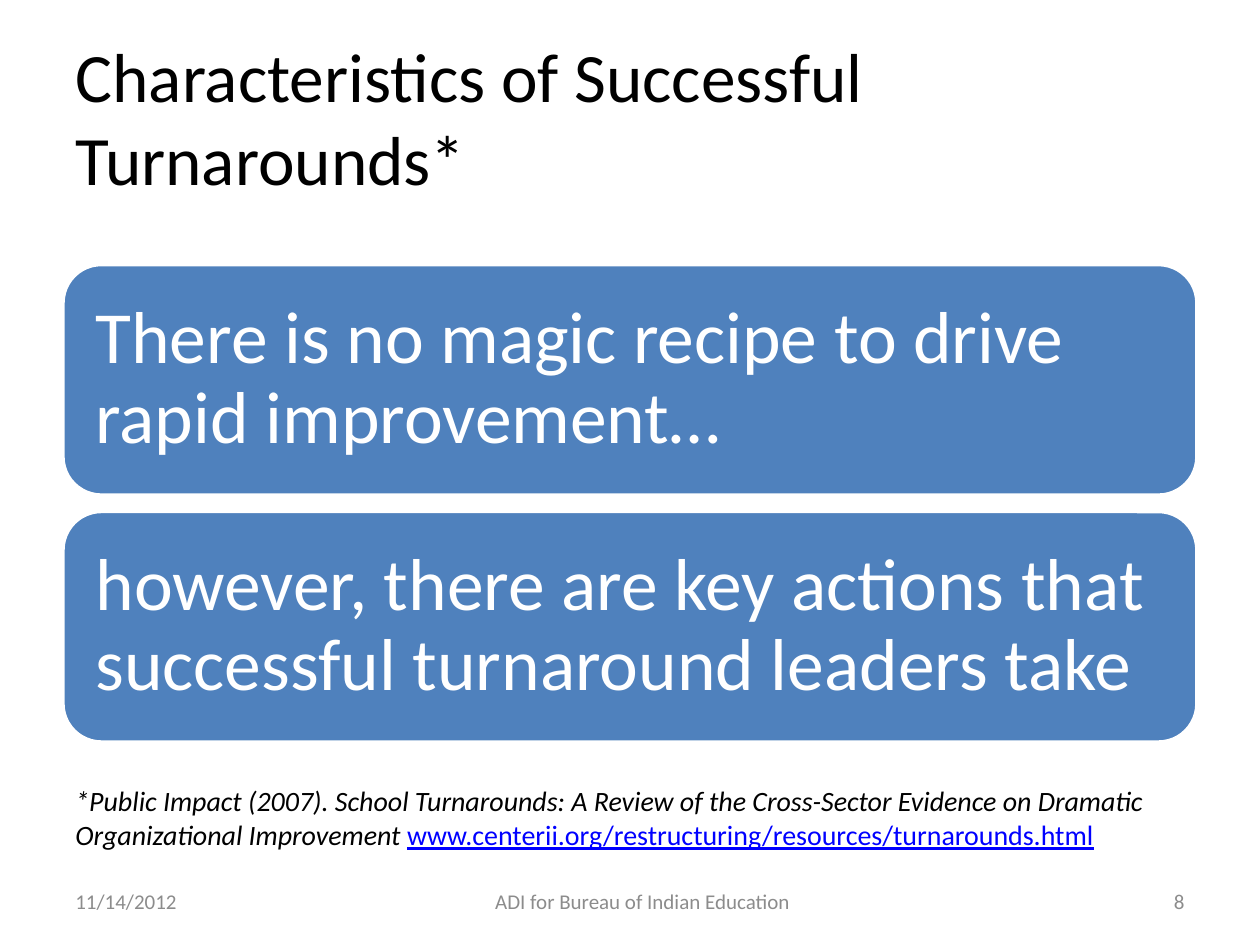
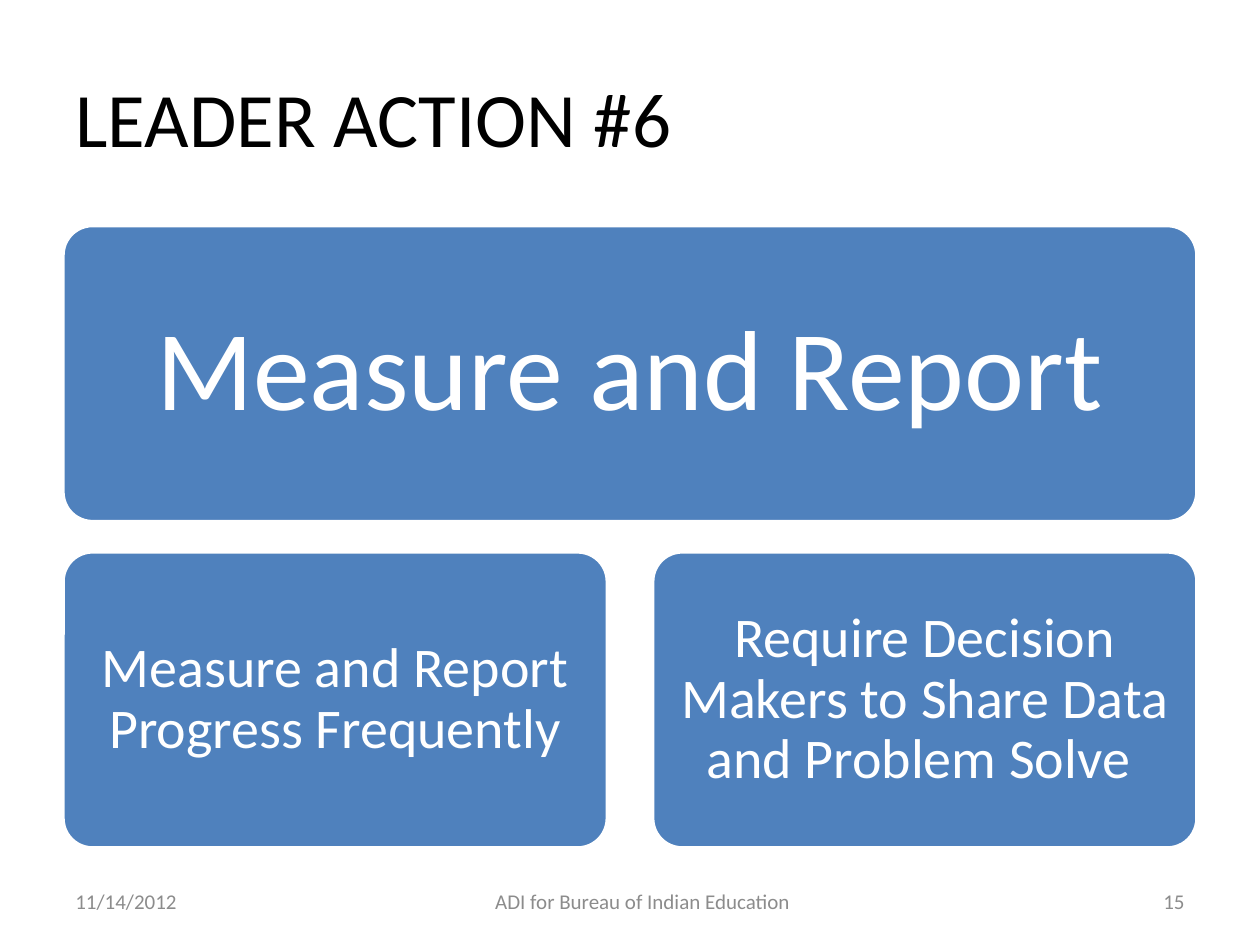
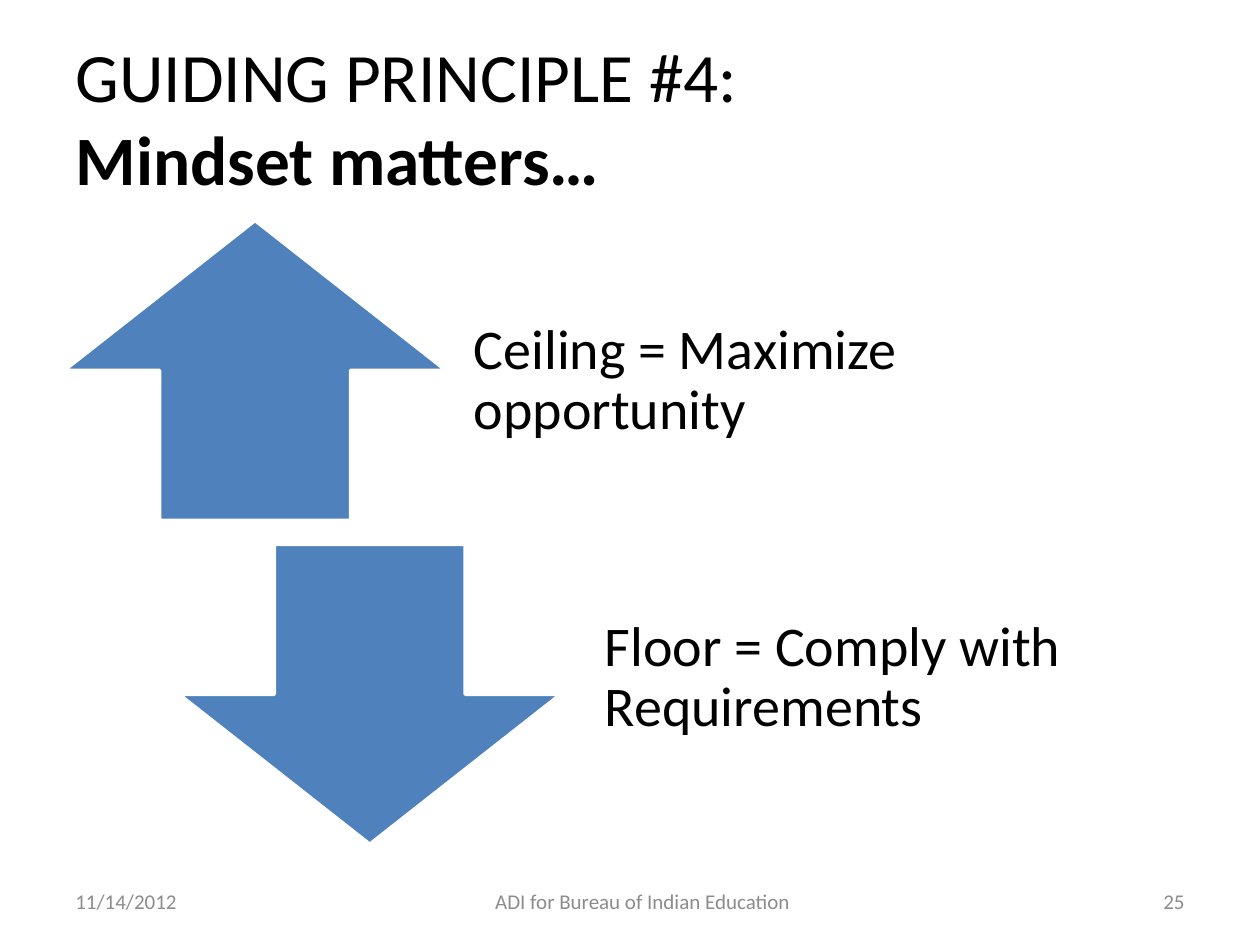
from dataclasses import dataclass
from pptx import Presentation
from pptx import util as u
from pptx.dml.color import RGBColor
from pptx.enum import shapes, text


@dataclass(frozen=True)
class Theme:
    font: str = "Calibri"
    blue: RGBColor = RGBColor(0x4F, 0x81, 0xBD)
    white: RGBColor = RGBColor(0xFF, 0xFF, 0xFF)
    black: RGBColor = RGBColor(0, 0, 0)
    grey: RGBColor = RGBColor(0x8C, 0x8C, 0x8C)
    link: RGBColor = RGBColor(0, 0, 0xFF)
    title: float = 44
    long_title: float = 39.6
    banner: float = 65
    statement: float = 42
    body: float = 32
    note: float = 16
    footer: float = 12


T = Theme()
SHAPE, ALIGN = shapes.MSO_SHAPE, text.PP_ALIGN

prs = Presentation()
prs.slide_width, prs.slide_height = u.Inches(10), u.Inches(7.5)

# Page grid, in inches
MARGIN = 0.05 * prs.slide_width.inches
WIDTH = prs.slide_width.inches - 2 * MARGIN
RIGHT = MARGIN + WIDTH


def write(sp, words, size, color, align=ALIGN.LEFT, insets=(0.1, 0.05, 0.1, 0.05),
          spacing=1.0, anchor=text.MSO_ANCHOR.MIDDLE):
    """Fill a shape with text in one style; insets run left, top, right, bottom."""
    tf = sp.text_frame
    tf.text = words
    tf.word_wrap = True
    tf.auto_size = text.MSO_AUTO_SIZE.NONE
    tf.vertical_anchor = anchor
    tf.margin_left, tf.margin_top, tf.margin_right, tf.margin_bottom = map(u.Inches, insets)
    p = tf.paragraphs[0]
    p.alignment, p.line_spacing = align, spacing
    for r in p.runs:
        r.font.name, r.font.size, r.font.color.rgb = T.font, u.Pt(size), color
    return p


def add_block(s, kind, left, top, width, height):
    """Add a blue shape with a white outline."""
    sp = s.shapes.add_shape(kind, *map(u.Inches, (left, top, width, height)))
    sp.shadow.inherit = False
    sp.fill.solid()
    sp.fill.fore_color.rgb = T.blue
    sp.line.color.rgb, sp.line.width = T.white, u.Pt(2)
    return sp


# Titles and footers of all slides
slides, titles = [], []
for title, size, number in (
    ("Characteristics of Successful Turnarounds*", T.long_title, "8"),
    ("LEADER ACTION #6", T.title, "15"),
    ("GUIDING PRINCIPLE #4:\vMindset matters…", T.long_title, "25"),
):
    s = prs.slides.add_slide(prs.slide_layouts[5])
    sp = s.shapes.title
    sp.left, sp.top, sp.width, sp.height = map(u.Inches, (MARGIN, 0.3, WIDTH, 1.25))
    titles.append(write(sp, title, size, T.black))
    for words, left, width, align in (
        ("11/14/2012", MARGIN, 2.33, ALIGN.LEFT),
        ("ADI for Bureau of Indian Education", 2.83, 4.54, ALIGN.CENTER),
        (number, RIGHT - 2.33, 2.33, ALIGN.RIGHT),
    ):
        sp = s.shapes.add_textbox(*map(u.Inches, (left, 6.95, width, 0.4)))
        write(sp, words, T.footer, T.grey, align)
    slides.append(s)
turnarounds, action, principle = slides

# Turnarounds: two stacked statements and a source note
height, gap = 1.83, 0.13
for row, words in enumerate((
    "There is no magic recipe to drive rapid improvement…",
    "however, there are key actions that successful turnaround leaders take",
)):
    sp = add_block(turnarounds, SHAPE.ROUNDED_RECTANGLE,
                   MARGIN, 2.1 + row * (height + gap), WIDTH, height)
    write(sp, words, T.statement, T.white, insets=(0.17,) * 4, spacing=0.9)

sp = turnarounds.shapes.add_textbox(*map(u.Inches, (MARGIN, 6.17, WIDTH, 0.64)))
p = write(sp, "*Public Impact (2007). School Turnarounds: A Review of the Cross-Sector "
          "Evidence on Dramatic Organizational Improvement ", T.note, T.black,
          anchor=text.MSO_ANCHOR.TOP)
p.runs[0].font.italic = True
r = p.add_run()
r.text = "www.centerii.org/restructuring/resources/turnarounds.html"
r.font.name, r.font.size, r.font.color.rgb = T.font, u.Pt(T.note), T.link
r.font.underline = True

# Leader action: one banner over two columns
top, height, row_gap, col_gap = 1.79, 2.35, 0.24, 0.36
column = (WIDTH - col_gap) / 2
for words, row, col, width, size, inset in (
    ("Measure and Report", 0, 0, WIDTH, T.banner, 0.27),
    ("Measure and Report Progress Frequently", 1, 0, column, T.body, 0.13),
    ("Require Decision Makers to Share Data and Problem Solve ", 1, 1, column, T.body, 0.13),
):
    sp = add_block(action, SHAPE.ROUNDED_RECTANGLE, MARGIN + col * (column + col_gap),
                   top + row * (height + row_gap), width, height)
    sp.adjustments[0] = 0.1
    write(sp, words, size, T.white, ALIGN.CENTER, (inset,) * 4, 0.9)

# Guiding principle: opposing arrows with their labels
titles[2].runs[1].font.bold = True
height = 2.38
for kind, left, top, words, label_left, label_top in (
    (SHAPE.UP_ARROW, 0.51, 1.75, "Ceiling = Maximize opportunity", 3.51, 1.96),
    (SHAPE.DOWN_ARROW, 1.42, 4.32, "Floor = Comply with Requirements", 4.55, 4.32),
):
    add_block(principle, kind, left, top, 3.03, height)
    sp = principle.shapes.add_textbox(*map(u.Inches, (label_left, label_top, 5.15, height)))
    write(sp, words, T.body, T.black, insets=(0.25, 0, 0.25, 0.25), spacing=0.9)

prs.save("out.pptx")
